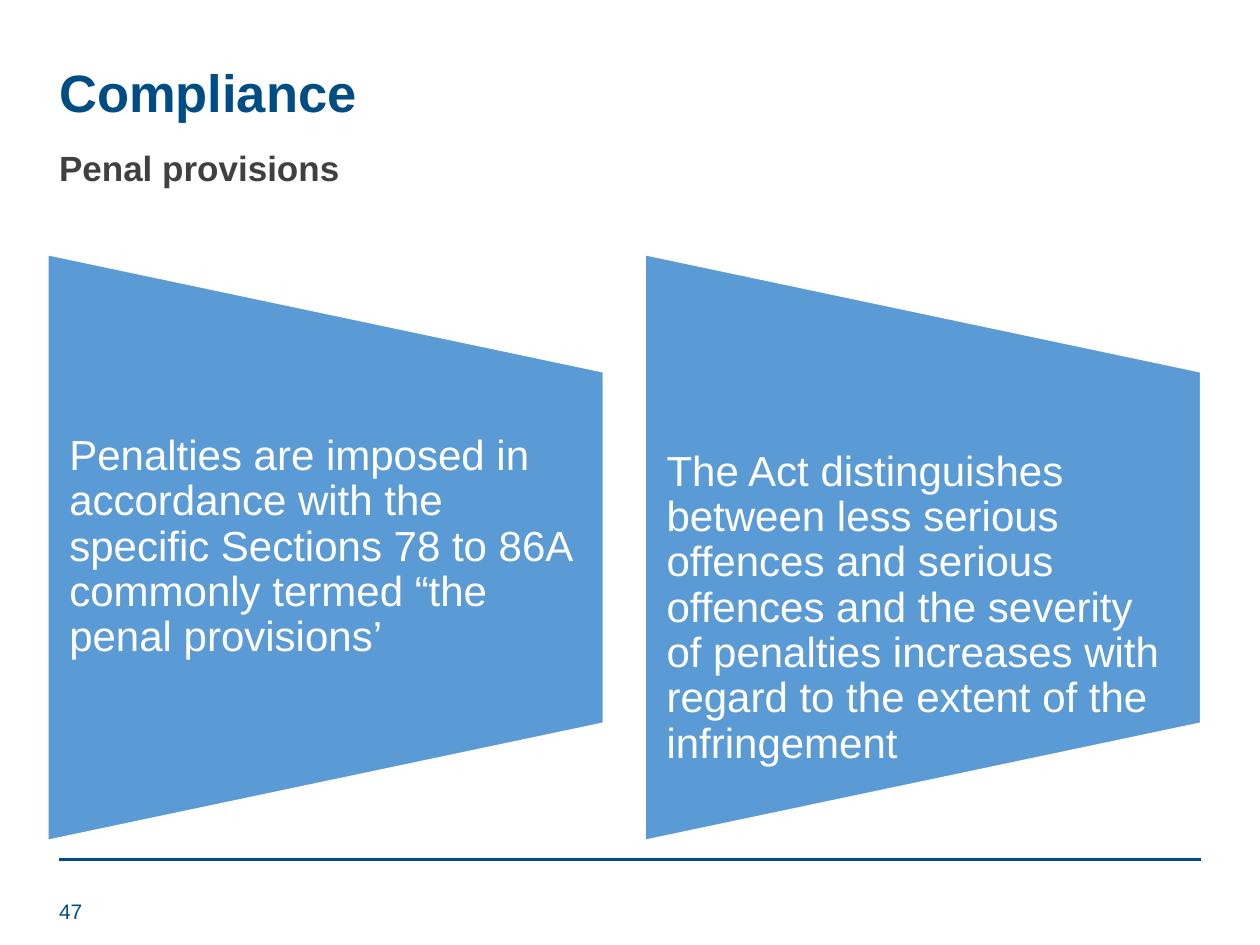
from dataclasses import dataclass

from lxml import etree
from pptx import Presentation
from pptx import util as u
from pptx.dml.color import RGBColor
from pptx.enum import shapes, text
from pptx.oxml.ns import qn


@dataclass(frozen=True)
class Theme:
    """Colours, font and type sizes."""
    navy: str = "004C85"
    grey: str = "404040"
    blue: str = "5B9BD5"
    white: str = "FFFFFF"
    font: str = "Arial"
    head: int = 30
    card: int = 24
    sub: int = 20
    foot: int = 12


def write(frame, words, size, color, bold=False, lead=0.9, anchor="TOP", pad=(0.1, 0.05)):
    """Put one formatted paragraph into a text frame."""
    frame.word_wrap = True
    frame.auto_size = text.MSO_AUTO_SIZE.NONE
    frame.vertical_anchor = getattr(text.MSO_ANCHOR, anchor)
    frame.margin_left = frame.margin_right = u.Inches(pad[0])
    frame.margin_top = u.Inches(pad[1])
    frame.margin_bottom = 0 if anchor == "TOP" else u.Inches(pad[1])
    para = frame.paragraphs[0]
    para.alignment = text.PP_ALIGN.LEFT
    para.line_spacing = lead
    para.space_before = u.Pt(0)
    run = para.add_run()
    run.text = words
    run.font.name = Theme.font
    run.font.size = u.Pt(size)
    run.font.bold = bold
    run.font.color.rgb = RGBColor.from_string(color)


class Deck:
    """Holds the style and the current slide on a 100 by 75 grid."""

    def __init__(self, theme):
        """Start a deck with one title-only slide."""
        self.theme = theme
        self.prs = Presentation()
        self.prs.slide_width, self.prs.slide_height = u.Inches(10), u.Inches(7.5)
        self.slide = self.prs.slides.add_slide(self.prs.slide_layouts[5])

    def grid(self, col, row):
        """Turn columns and rows into slide lengths."""
        return (round(self.prs.slide_width * col / 100),
                round(self.prs.slide_height * row / 75))

    def area(self, col, row, wide, high):
        """Turn a grid area into left, top, width and height."""
        return *self.grid(col, row), *self.grid(wide, high)

    def title(self, words, *cells):
        """Move and fill the title placeholder."""
        box = self.slide.shapes.title
        box.left, box.top, box.width, box.height = self.area(*cells)
        write(box.text_frame, words, self.theme.head, self.theme.navy, bold=True)

    def label(self, words, *cells, **form):
        """Add a text box."""
        box = self.slide.shapes.add_textbox(*self.area(*cells))
        write(box.text_frame, words, **form)

    def rule(self, left, right, row):
        """Draw a horizontal line."""
        line = self.slide.shapes.add_connector(
            shapes.MSO_CONNECTOR.STRAIGHT, *self.grid(left, row), *self.grid(right, row))
        line.line.color.rgb = RGBColor.from_string(self.theme.navy)
        line.line.width = u.Pt(2)
        etree.SubElement(line._element.spPr, qn("a:effectLst"))

    def card(self, words, col, **form):
        """Draw a sideways trapezoid with its text."""
        shape = self.slide.shapes.add_shape(
            shapes.MSO_SHAPE.FLOWCHART_MANUAL_OPERATION,
            *self.area(col - 1.2, 21.4, 46.5, 44.1))
        shape.rotation = 270
        shape.shadow.inherit = False
        shape.fill.solid()
        shape.fill.fore_color.rgb = RGBColor.from_string(self.theme.blue)
        shape.line.color.rgb = RGBColor.from_string(self.theme.white)
        shape.line.width = u.Pt(1)
        self.label(words, col, 29.5, 44.1, 27.9,
                   size=self.theme.card, color=self.theme.white, **form)


def main():
    """Build the slide and save it."""
    theme = Theme()
    deck = Deck(theme)
    deck.rule(4.7, 95.3, 68.2)
    deck.title("Compliance", 3.7, 4.8, 86.2, 5.8)
    deck.label("47", 3.7, 70.3, 22.5, 4,
               size=theme.foot, color=theme.navy, lead=1.0, anchor="MIDDLE")
    deck.label("Penal provisions", 3.7, 11.5, 86.2, 4.8,
               size=theme.sub, color=theme.grey, bold=True)
    left, step = 3.8, 47.4
    deck.card("Penalties are imposed in accordance with the specific Sections 78 to 86A "
              "commonly termed “the penal provisions’", left, anchor="MIDDLE", pad=(0.17, 0))
    deck.card("The Act distinguishes between less serious offences and serious offences and "
              "the severity of penalties increases with regard to the extent of the "
              "infringement", left + step, pad=(0.17, 0.62))
    deck.prs.save("out.pptx")


if __name__ == "__main__":
    main()
